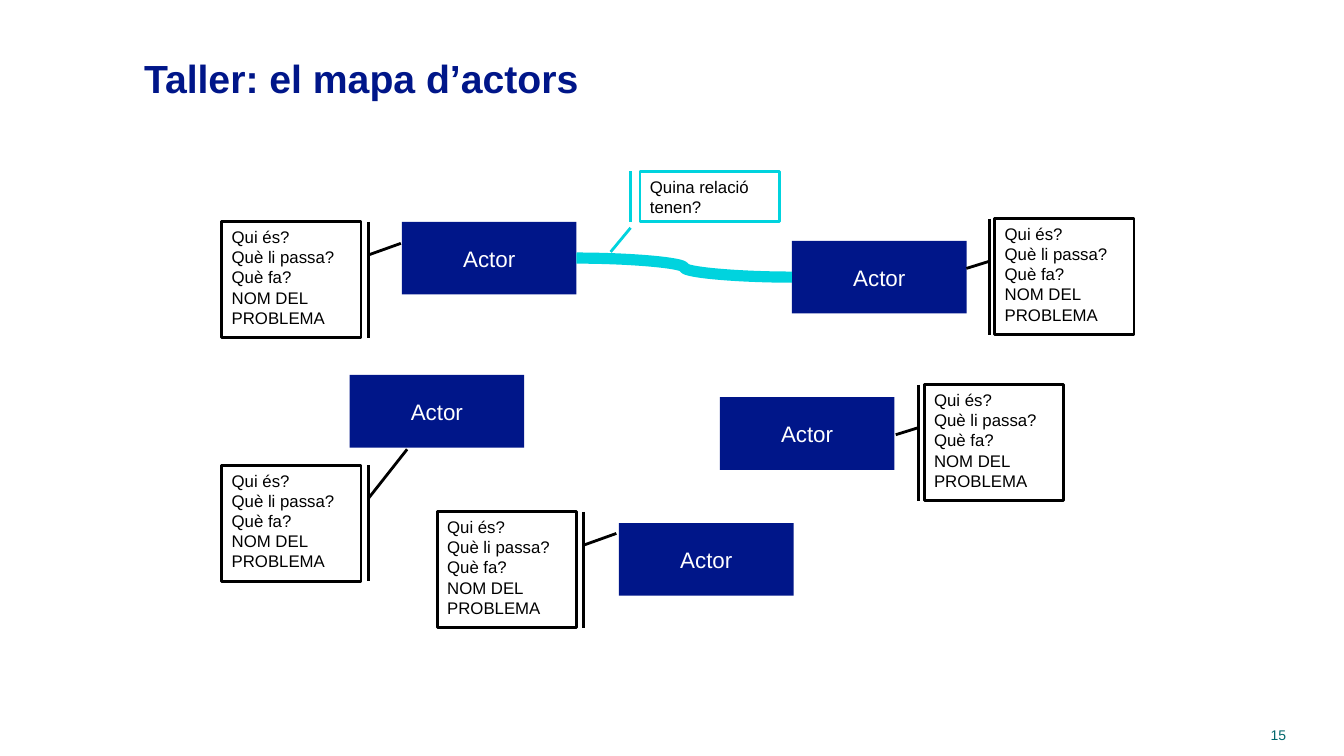
from dataclasses import dataclass

import pptx
import pptx.dml.color
import pptx.enum.shapes
import pptx.enum.text
import pptx.oxml.ns
import pptx.util
from lxml import etree

Cm = pptx.util.Cm
Pt = pptx.util.Pt
Shapes = pptx.enum.shapes.MSO_SHAPE
Align = pptx.enum.text.PP_ALIGN
Anchor = pptx.enum.text.MSO_ANCHOR


@dataclass(frozen=True)
class Theme:
    font: str = "Arial"
    navy: str = "001689"
    cyan: str = "00D3DE"
    teal: str = "00676C"
    black: str = "000000"
    white: str = "FFFFFF"
    title_size: int = 28
    actor_size: int = 16
    note_size: int = 12
    number_size: int = 10
    border: int = 2
    relation: int = 8


THEME = Theme()
ACTOR_SIZE = (4.4, 1.83)
NOTE_SIZE = (3.51, 2.92)
RELATION_NOTE_SIZE = (3.51, 1.27)
QUESTIONS = ["Qui és?", "Què li passa?", "Què fa?", "NOM DEL PROBLEMA"]

POINT_RIGHT = (0.287, 1.051, 0.186, 1.286)
POINT_UP_RIGHT = (0.287, 1.051, -0.14, 1.331)
POINT_LEFT = (0.368, -0.038, 0.43, -0.204)
POINT_DOWN_LEFT = (1.12, -0.068, 1.598, -0.211)

ACTORS = [(10.13, 5.59), (19.96, 6.07), (8.81, 9.45), (18.14, 10.01), (15.6, 13.18)]
NOTES = [
    (5.59, 5.59, POINT_RIGHT),
    (25.07, 5.51, POINT_LEFT),
    (5.59, 11.73, POINT_UP_RIGHT),
    (11.02, 12.9, POINT_RIGHT),
    (23.29, 9.7, POINT_LEFT),
]


def rgb(color):
    return pptx.dml.color.RGBColor.from_string(color)


def write(shape, lines, size, color, align=Align.LEFT, anchor=Anchor.TOP, bold=False):
    frame = shape.text_frame
    frame.word_wrap = True
    frame.vertical_anchor = anchor
    for index, line in enumerate(lines):
        paragraph = frame.add_paragraph() if index else frame.paragraphs[0]
        paragraph.alignment = align
        run = paragraph.add_run()
        run.text = line
        run.font.name = THEME.font
        run.font.size = Pt(size)
        run.font.bold = bold
        run.font.color.rgb = rgb(color)


def add_label(slide, left, top, width, height, text, size, color, **style):
    box = slide.shapes.add_textbox(Cm(left), Cm(top), Cm(width), Cm(height))
    write(box, [text], size, color, anchor=Anchor.MIDDLE, **style)


def add_filled_shape(slide, kind, left, top, size, fill):
    width, height = size
    shape = slide.shapes.add_shape(kind, Cm(left), Cm(top), Cm(width), Cm(height))
    shape.shadow.inherit = False
    shape.fill.solid()
    shape.fill.fore_color.rgb = rgb(fill)
    return shape


def add_actor(slide, left, top):
    actor = add_filled_shape(slide, Shapes.RECTANGLE, left, top, ACTOR_SIZE, THEME.navy)
    actor.line.fill.background()
    write(actor, ["Actor"], THEME.actor_size, THEME.white, Align.CENTER, Anchor.MIDDLE)
    return actor


def add_note(slide, left, top, size, pointer, lines, border):
    kind = Shapes.LINE_CALLOUT_1_BORDER_AND_ACCENT_BAR
    note = add_filled_shape(slide, kind, left, top, size, THEME.white)
    for index, value in enumerate(pointer):
        note.adjustments[index] = value
    note.line.color.rgb = rgb(border)
    note.line.width = Pt(THEME.border)
    write(note, lines, THEME.note_size, THEME.black)


def add_relation(slide, right_actor, left_actor):
    relation = slide.shapes.add_connector(
        pptx.enum.shapes.MSO_CONNECTOR.CURVE, 0, 0, 0, 0
    )
    relation.begin_connect(right_actor, 1)
    relation.end_connect(left_actor, 3)
    relation.line.color.rgb = rgb(THEME.cyan)
    relation.line.width = Pt(THEME.relation)
    etree.SubElement(relation.element.spPr, pptx.oxml.ns.qn("a:effectLst"))


def main():
    presentation = pptx.Presentation()
    presentation.slide_width = Cm(33.87)
    presentation.slide_height = Cm(19.05)
    slide = presentation.slides.add_slide(presentation.slide_layouts[6])

    add_label(slide, 30.53, 18.14, 2.13, 0.74, "15",
              THEME.number_size, THEME.teal, align=Align.RIGHT)
    actors = [add_actor(slide, left, top) for left, top in ACTORS]
    for left, top, pointer in NOTES:
        add_note(slide, left, top, NOTE_SIZE, pointer, QUESTIONS, THEME.black)
    add_relation(slide, actors[1], actors[0])
    add_note(slide, 16.13, 4.32, RELATION_NOTE_SIZE, POINT_DOWN_LEFT,
             ["Quina relació tenen?"], THEME.cyan)
    add_label(slide, 3.38, 1.17, 28.85, 1.57, "Taller: el mapa d’actors",
              THEME.title_size, THEME.navy, bold=True)

    presentation.save("out.pptx")


if __name__ == "__main__":
    main()
